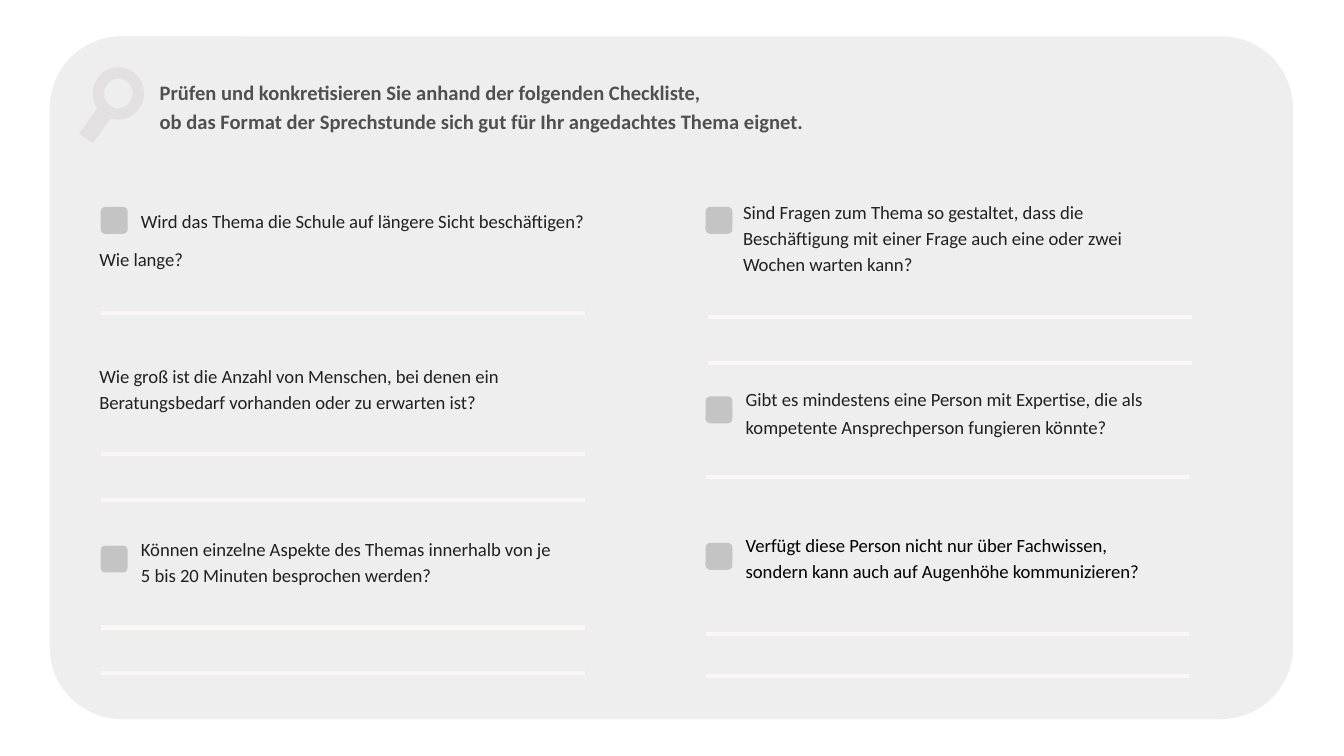
import pptx
import pptx.dml.color
import pptx.enum.shapes
import pptx.enum.text
import pptx.oxml.ns
import pptx.util
from lxml import etree
from pptx.util import Inches

RGBColor = pptx.dml.color.RGBColor
PANEL = RGBColor(0xEE, 0xEE, 0xEE)
HEADING = RGBColor(0x50, 0x50, 0x50)
BODY = RGBColor(0x21, 0x21, 0x21)
BLACK = RGBColor(0x00, 0x00, 0x00)
CHECKBOX = RGBColor(0xC4, 0xC4, 0xC4)
WRITING_LINE = RGBColor(0xFC, 0xF7, 0xF7)
MAGNIFIER = RGBColor(0xE2, 0xE0, 0xE0)
SHAPES = pptx.enum.shapes.MSO_SHAPE

# Widescreen slide, 16:9
presentation = pptx.Presentation()
presentation.slide_width = Inches(10)
presentation.slide_height = Inches(10 * 9 / 16)
slide = presentation.slides.add_slide(presentation.slide_layouts[6])


def add_filled_shape(kind, left, top, width, height, adjustment, color):
    shape = slide.shapes.add_shape(
        kind, Inches(left), Inches(top), Inches(width), Inches(height))
    shape.adjustments[0] = adjustment
    shape.shadow.inherit = False
    shape.fill.solid()
    shape.fill.fore_color.rgb = color
    shape.line.fill.background()
    return shape


def add_line(start_x, start_y, end_x, end_y, color, width):
    connector = slide.shapes.add_connector(
        pptx.enum.shapes.MSO_CONNECTOR.STRAIGHT,
        Inches(start_x), Inches(start_y), Inches(end_x), Inches(end_y))
    connector.line.color.rgb = color
    connector.line.width = pptx.util.Pt(width)
    properties = connector.element.spPr
    etree.SubElement(properties, pptx.oxml.ns.qn("a:effectLst"))


# Background panel
add_filled_shape(SHAPES.ROUNDED_RECTANGLE, 0.37, 0.27, 9.25, 5.08, 0.105, PANEL)

# Heading and questions: left, top, width, height, line spacing, runs
# Each run: text, size, font, colour, bold
texts = [
    (1.09, 0.47, 5.63, 0.6, 1.15, [
        ("Prüfen und konkretisieren Sie anhand der folgenden Checkliste, \n"
         "ob das Format der Sprechstunde sich gut für Ihr angedachtes Thema eignet.",
         11, "Calibri", HEADING, True)]),
    (0.95, 1.38, 5.08, 0.37, 1.5, [
        ("Wird das Thema die Schule auf längere Sicht beschäftigen?",
         10, "Calibri", BODY, False)]),
    (0.64, 1.66, 3.28, 0.37, 1.5, [
        ("Wie lange?", 10, "Calibri", BODY, False)]),
    (0.64, 2.59, 3.71, 0.56, 1.15, [
        ("Wie groß ist die Anzahl von Menschen, bei denen ein "
         "Beratungsbedarf vorhanden oder zu erwarten ist?",
         10, "Calibri", BODY, False)]),
    (0.95, 3.88, 3.28, 0.56, 1.15, [
        ("Können einzelne Aspekte des Themas innerhalb von je "
         "5 bis 20 Minuten besprochen werden?", 10, "Calibri", BODY, False)]),
    (5.43, 1.37, 3.28, 0.76, 1.15, [
        ("Sind Fragen zum Thema so gestaltet, dass die Beschäftigung mit "
         "einer Frage auch eine oder zwei Wochen warten kann?",
         10, "Calibri", BODY, False)]),
    (5.45, 2.76, 3.28, 0.58, 1.15, [
        ("Gibt es mindestens eine Person mit Expertise, die als "
         "kompetente Ansprechperson fungieren könnte?",
         10, "Calibri", BODY, False),
        (" ", 11, "Arial", BLACK, False)]),
    (5.45, 3.85, 3.28, 0.56, 1.15, [
        ("Verfügt diese Person nicht nur über Fachwissen, "
         "sondern kann auch auf Augenhöhe kommunizieren?",
         10, "Calibri", BLACK, False)]),
]
for left, top, width, height, spacing, runs in texts:
    text_box = slide.shapes.add_textbox(
        Inches(left), Inches(top), Inches(width), Inches(height))
    frame = text_box.text_frame
    frame.word_wrap = True
    frame.auto_size = pptx.enum.text.MSO_AUTO_SIZE.SHAPE_TO_FIT_TEXT
    frame.margin_left = frame.margin_right = Inches(0.1)
    frame.margin_top = frame.margin_bottom = Inches(0.1)
    paragraph = frame.paragraphs[0]
    paragraph.line_spacing = spacing
    for text, size, font_name, color, bold in runs:
        for index, part in enumerate(text.split("\n")):
            if index:
                paragraph.add_line_break()
            run = paragraph.add_run()
            run.text = part
            run.font.size = pptx.util.Pt(size)
            run.font.name = font_name
            run.font.color.rgb = color
            run.font.bold = bold

# Checkboxes
for left, tops in [(0.75, (1.54, 4.06)), (5.25, (1.54, 2.95, 4.04))]:
    for top in tops:
        add_filled_shape(SHAPES.ROUNDED_RECTANGLE, left, top, 0.2, 0.2, 0.167, CHECKBOX)

# Writing lines
for left, tops in [(0.75, (2.33, 3.38, 3.72, 4.67, 5.01)),
                   (5.27, (2.36, 2.7)),
                   (5.25, (3.55, 4.72, 5.03))]:
    for top in tops:
        add_line(left, top, left + 3.6, top, WRITING_LINE, 2.25)

# Magnifying glass
lens = add_filled_shape(SHAPES.DONUT, 0.69, 0.51, 0.38, 0.37, 0.198, MAGNIFIER)
lens.rotation = 96.9
lens.line.color.rgb = MAGNIFIER
lens.line.width = pptx.util.Pt(0.75)
add_line(0.79, 0.82, 0.64, 1.03, MAGNIFIER, 9)

presentation.save("out.pptx")
